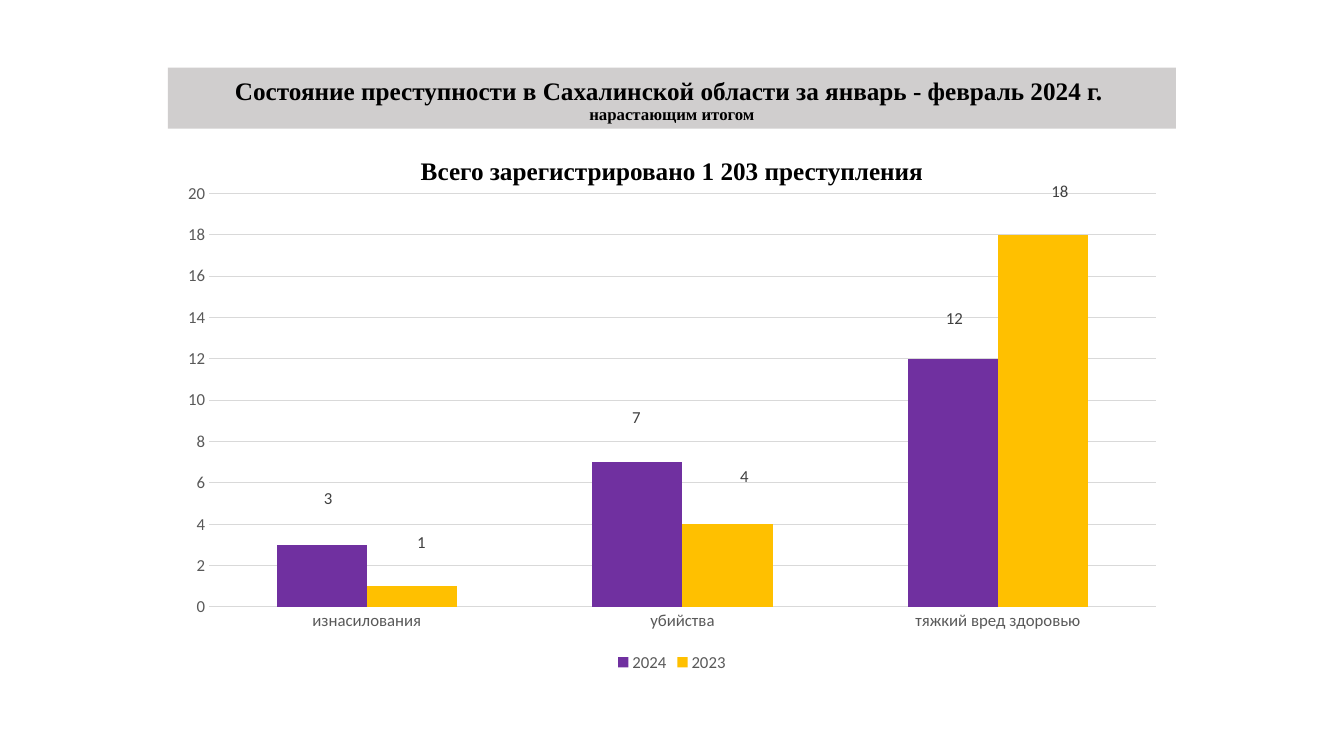
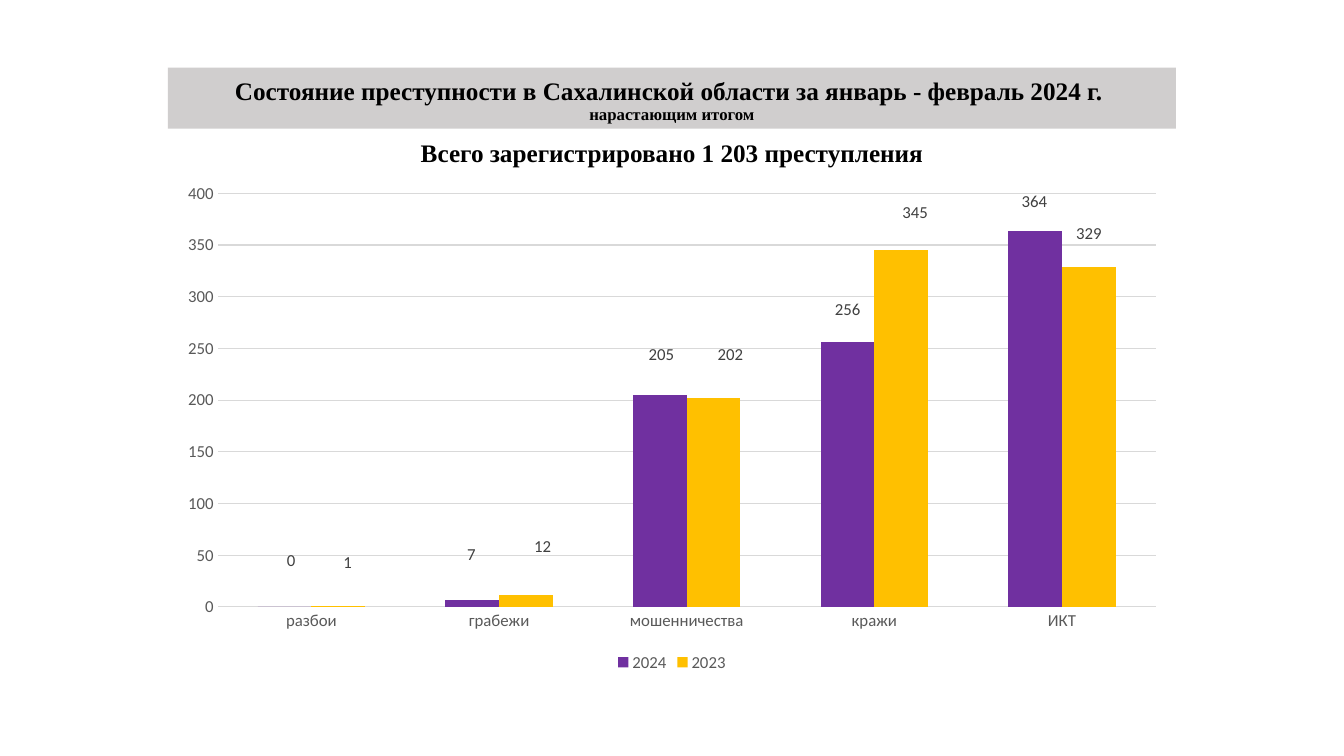
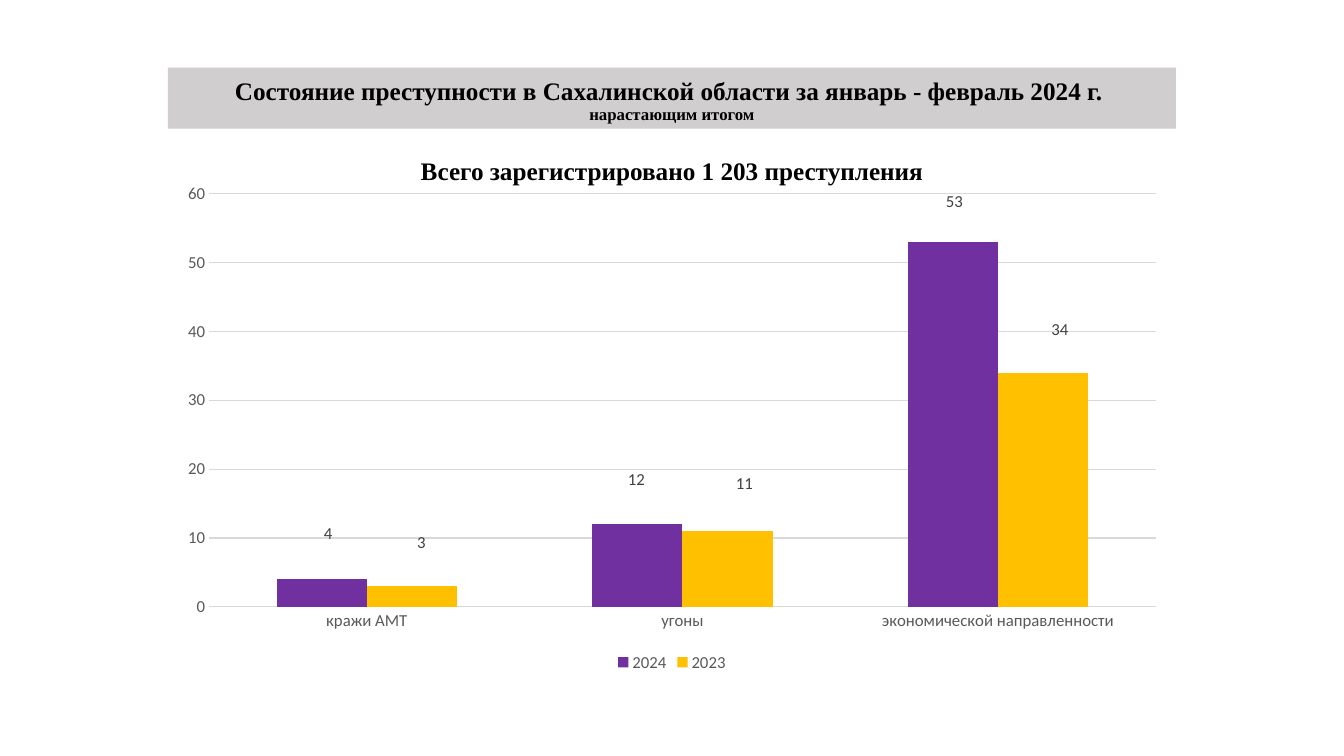
from copy import deepcopy
from dataclasses import dataclass

from lxml.etree import SubElement
from pptx import Presentation
from pptx.chart.data import CategoryChartData
from pptx.dml.color import RGBColor
from pptx.enum.chart import XL_CHART_TYPE, XL_LEGEND_POSITION, XL_TICK_MARK
from pptx.enum.text import MSO_ANCHOR, MSO_AUTO_SIZE, PP_ALIGN
from pptx.oxml import parse_xml
from pptx.oxml.ns import nsdecls, qn
from pptx.util import Pt


@dataclass(frozen=True)
class Theme:
    """Colours, fonts, type sizes and the column shared by all slides."""
    ink: str = "000000"
    band: str = "D0CECE"
    axis: str = "595959"
    label: str = "404040"
    grid: str = "D9D9D9"
    years: tuple = ("7030A0", "FFC000")
    heading_font: str = "Times New Roman"
    chart_font: str = "Calibri"
    heading_size: int = 18
    note_size: int = 12
    chart_size: int = 12
    left: int = 120
    width: int = 720


HEADING = "Состояние преступности в Сахалинской области за январь - февраль 2024 г. "
NOTE = "нарастающим итогом"
TOTAL = "Всего зарегистрировано 1 203 преступления"
YEARS = ("2024", "2023")
CHART_TOP, CHART_HEIGHT = 123.8, 359.3
LABEL_SHIFTS = (
    ((4.5, -23), (-0.7, -22), (1, -18.5), (0, -13), (-0.5, -10.5)),
    ((6.7, -21), (12, -24), (12, -21), (10, -16.5), (0, -13.5)),
)
SLIDES = (
    (111.6, ("изнасилования", "убийства", "тяжкий вред здоровью"),
     ((3, 7, 12), (1, 4, 18))),
    (98.6, ("разбои", "грабежи", "мошенничества", "кражи", "ИКТ"),
     ((0, 7, 205, 256, 364), (1, 12, 202, 345, 329))),
    (111.6, ("кражи АМТ", "угоны", "экономической направленности"),
     ((4, 12, 53), (3, 11, 34))),
)


def apply(target, values):
    """Set each named value as an attribute of the target."""
    for name, value in values.items():
        setattr(target, name, value)


class Deck:
    """Presentation with its theme and the slide being filled."""

    def __init__(self, theme):
        """Start an empty widescreen presentation."""
        self.theme = theme
        self.presentation = Presentation()
        apply(self.presentation, {"slide_width": Pt(960), "slide_height": Pt(540)})
        self.slide = None

    def new_slide(self):
        """Add a title slide and make it current."""
        layout = self.presentation.slide_layouts[0]
        self.slide = self.presentation.slides.add_slide(layout)

    def style_font(self, font, family, size, colour, bold=False):
        """Give a font its family, size, weight and colour."""
        apply(font, {"name": family, "size": Pt(size), "bold": bold})
        font.color.rgb = RGBColor.from_string(colour)

    def place(self, placeholder, top, height, anchor):
        """Move a placeholder into the shared column and return its paragraph."""
        apply(placeholder, {"left": Pt(self.theme.left), "top": Pt(top),
                            "width": Pt(self.theme.width), "height": Pt(height)})
        apply(placeholder.text_frame, {"vertical_anchor": anchor, "word_wrap": True,
                                       "auto_size": MSO_AUTO_SIZE.NONE})
        return placeholder.text_frame.paragraphs[0]

    def bold_run(self, paragraph, text, size):
        """Add a bold heading run to a paragraph."""
        run = paragraph.add_run()
        run.text = text
        self.style_font(run.font, self.theme.heading_font, size, self.theme.ink, True)
        return run

    def heading(self, text, note):
        """Fill the title band with a heading and a smaller second line."""
        band = self.slide.shapes.title
        paragraph = self.place(band, 48.4, 43.6, MSO_ANCHOR.BOTTOM)
        band.fill.solid()
        band.fill.fore_color.rgb = RGBColor.from_string(self.theme.band)
        apply(paragraph, {"alignment": PP_ALIGN.CENTER, "line_spacing": 0.9})
        first = self.bold_run(paragraph, text, self.theme.heading_size)
        paragraph.add_line_break()
        line_break = paragraph._p.find(qn("a:br"))
        line_break.append(deepcopy(first._r.find(qn("a:rPr"))))
        self.bold_run(paragraph, note, self.theme.note_size)

    def total(self, text, top):
        """Fill the subtitle with the overall count."""
        paragraph = self.place(self.slide.placeholders[1], top, 26, MSO_ANCHOR.TOP)
        apply(paragraph, {"alignment": PP_ALIGN.CENTER, "line_spacing": 0.8,
                          "space_before": Pt(10)})
        self.bold_run(paragraph, text, self.theme.heading_size)

    def axis(self, axis, gridlines):
        """Style a chart axis without a line or ticks."""
        apply(axis, {"major_tick_mark": XL_TICK_MARK.NONE,
                     "minor_tick_mark": XL_TICK_MARK.NONE,
                     "has_major_gridlines": gridlines})
        axis.format.line.fill.background()
        self.style_font(axis.tick_labels.font, self.theme.chart_font,
                        self.theme.chart_size, self.theme.axis)
        if gridlines:
            line = axis.major_gridlines.format.line
            line.width = Pt(0.75)
            line.color.rgb = RGBColor.from_string(self.theme.grid)

    def value_labels(self, series, shifts):
        """Show the values, each moved from its usual place by a shift in points."""
        labels = series.data_labels
        labels.show_value = True
        fonts = [labels.font]
        fonts += [series.points[i].data_label.font for i in range(len(series.values))]
        for font in fonts:
            self.style_font(font, self.theme.chart_font, self.theme.chart_size,
                            self.theme.label)
        for leader in series._element.iter(qn("c:showLeaderLines")):
            leader.set("val", "0")
        for label, (across, down) in zip(series._element.iter(qn("c:dLbl")), shifts):
            layout = parse_xml(f"<c:layout {nsdecls('c')}><c:manualLayout/></c:layout>")
            for name, share in (("x", across / self.theme.width),
                                ("y", down / CHART_HEIGHT)):
                SubElement(layout[0], qn(f"c:{name}"), val=f"{share:.4f}")
            label.find(qn("c:idx")).addnext(layout)

    def columns(self, categories, values):
        """Add a clustered column chart comparing the years."""
        data = CategoryChartData()
        data.categories = categories
        for year, counts in zip(YEARS, values):
            data.add_series(year, counts)
        chart = self.slide.shapes.add_chart(
            XL_CHART_TYPE.COLUMN_CLUSTERED, Pt(self.theme.left), Pt(CHART_TOP),
            Pt(self.theme.width), Pt(CHART_HEIGHT), data).chart
        apply(chart, {"has_title": False, "has_legend": True})
        self.style_font(chart.font, self.theme.chart_font, 10, self.theme.ink)
        apply(chart.legend, {"position": XL_LEGEND_POSITION.BOTTOM,
                             "include_in_layout": False})
        self.style_font(chart.legend.font, self.theme.chart_font,
                        self.theme.chart_size, self.theme.axis)
        self.axis(chart.category_axis, False)
        self.axis(chart.value_axis, True)
        plot = chart.plots[0]
        apply(plot, {"gap_width": 150, "overlap": 0, "vary_by_categories": False})
        for series, colour, shifts in zip(plot.series, self.theme.years, LABEL_SHIFTS):
            series.format.fill.solid()
            series.format.fill.fore_color.rgb = RGBColor.from_string(colour)
            self.value_labels(series, shifts)


def main():
    """Build and save the crime statistics slides."""
    deck = Deck(Theme())
    for total_top, categories, values in SLIDES:
        deck.new_slide()
        deck.heading(HEADING, NOTE)
        deck.total(TOTAL, total_top)
        deck.columns(categories, values)
    deck.presentation.save("out.pptx")


if __name__ == "__main__":
    main()
